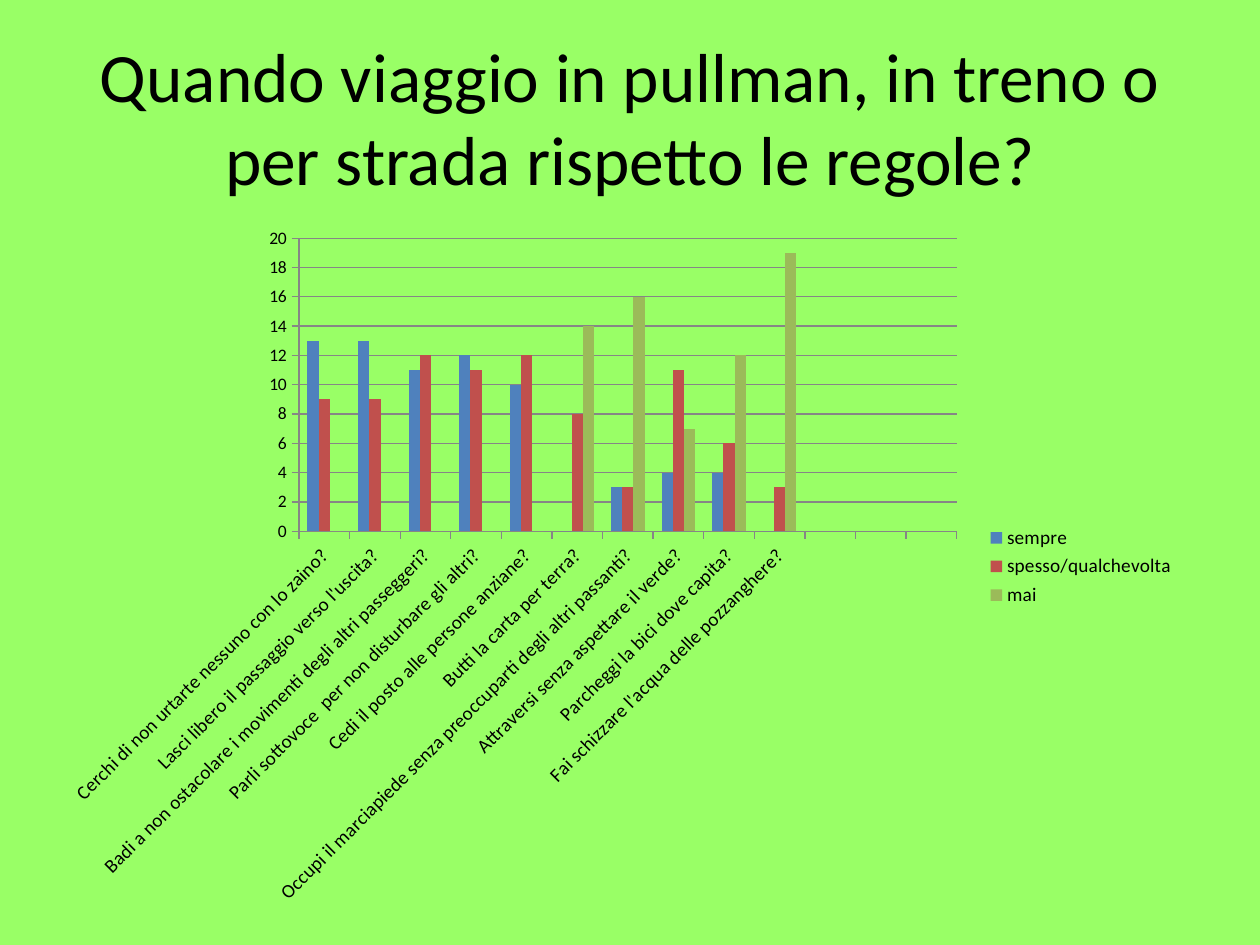
from dataclasses import dataclass

from lxml import etree
from pptx import Presentation
from pptx import util as u
from pptx.chart.data import CategoryChartData
from pptx.dml.color import RGBColor
from pptx.enum import chart as ch
from pptx.enum import text as tx
from pptx.oxml.ns import qn


@dataclass(frozen=True)
class Theme:
    font: str = "Calibri"
    back: str = "99FF66"
    ink: str = "000000"
    grid: str = "868686"
    bars: tuple = ("4F81BD", "C0504D", "9BBB59")
    title: float = 39.6
    body: float = 10
    label: float = 11


THEME = Theme()
TITLE = "Quando viaggio in pullman, in treno o per strada rispetto le regole?"
ASKS = [
    "Cerchi di non urtarte nessuno con lo zaino?",
    "Lasci libero il passaggio verso l'uscita?",
    "Badi a non ostacolare i movimenti degli altri passeggeri?",
    "Parli sottovoce  per non disturbare gli altri?",
    "Cedi il posto alle persone anziane?",
    "Butti la carta per terra?",
    "Occupi il marciapiede senza preoccuparti degli altri passanti?",
    "Attraversi senza aspettare il verde?",
    "Parcheggi la bici dove capita?",
    "Fai schizzare l'acqua delle pozzanghere?",
]
SPARE = 3
VOTES = {
    "sempre": [13, 13, 11, 12, 10, 0, 3, 4, 4, 0],
    "spesso/qualchevolta": [9, 9, 12, 11, 12, 8, 3, 11, 6, 3],
    "mai": [0, 0, 0, 0, 0, 14, 16, 7, 12, 19],
}
PLOT = {"x": 0.216, "y": 0.034, "w": 0.58, "h": 0.416}


def style(font, size):
    font.name = THEME.font
    font.size = u.Pt(size)
    font.color.rgb = RGBColor.from_string(THEME.ink)


def write(slide, box, words, size, align=tx.PP_ALIGN.CENTER):
    frame = slide.shapes.add_textbox(*map(u.Cm, box)).text_frame
    frame.word_wrap = True
    frame.vertical_anchor = tx.MSO_ANCHOR.MIDDLE
    para = frame.paragraphs[0]
    para.text = words
    para.alignment = align
    style(para.font, size)


def place(chart, parts):
    area = chart.plots[0]._element.getparent()
    for old in area.findall(qn("c:layout")):
        area.remove(old)
    layout = etree.Element(qn("c:layout"))
    area.insert(0, layout)
    manual = etree.SubElement(layout, qn("c:manualLayout"))
    rules = {"layoutTarget": "inner", "xMode": "edge", "yMode": "edge", **parts}
    for name, val in rules.items():
        etree.SubElement(manual, qn(f"c:{name}")).set("val", str(val))


def rule(line):
    line.color.rgb = RGBColor.from_string(THEME.grid)
    line.width = u.Pt(0.75)


def axes(chart):
    cats, vals = chart.category_axis, chart.value_axis
    for axis, size in ((cats, THEME.label), (vals, THEME.body)):
        axis.major_tick_mark = ch.XL_TICK_MARK.OUTSIDE
        axis.minor_tick_mark = ch.XL_TICK_MARK.NONE
        style(axis.tick_labels.font, size)
        rule(axis.format.line)
    turn = cats.tick_labels.font._element.getparent().getparent().getparent()
    turn.find(qn("a:bodyPr")).set("rot", "-2700000")
    vals.minimum_scale, vals.maximum_scale, vals.major_unit = 0, 20, 2
    vals.has_major_gridlines = True
    rule(vals.major_gridlines.format.line)


def survey(slide, box):
    data = CategoryChartData()
    data.categories = ASKS + [""] * SPARE
    for name, votes in VOTES.items():
        data.add_series(name, votes + [None] * SPARE)
    kind = ch.XL_CHART_TYPE.COLUMN_CLUSTERED
    chart = slide.shapes.add_chart(kind, *map(u.Cm, box), data).chart
    chart.has_title = False
    style(chart.font, THEME.body)
    axes(chart)
    plot = chart.plots[0]
    plot.vary_by_categories = False
    plot.gap_width = 150
    plot.overlap = 0
    for bar, color in zip(plot.series, THEME.bars):
        bar.format.fill.solid()
        bar.format.fill.fore_color.rgb = RGBColor.from_string(color)
    chart.has_legend = True
    chart.legend.position = ch.XL_LEGEND_POSITION.RIGHT
    chart.legend.include_in_layout = False
    style(chart.legend.font, THEME.label)
    place(chart, PLOT)


def main():
    deck = Presentation()
    deck.slide_width, deck.slide_height = u.Cm(25.4), u.Cm(19.05)
    slide = deck.slides.add_slide(deck.slide_layouts[6])
    fill = slide.background.fill
    fill.solid()
    fill.fore_color.rgb = RGBColor.from_string(THEME.back)
    write(slide, (1.27, 0.76, 22.86, 3.18), TITLE, THEME.title)
    survey(slide, (1.09, 4.32, 22.86, 14.2))
    deck.save("out.pptx")


if __name__ == "__main__":
    main()
